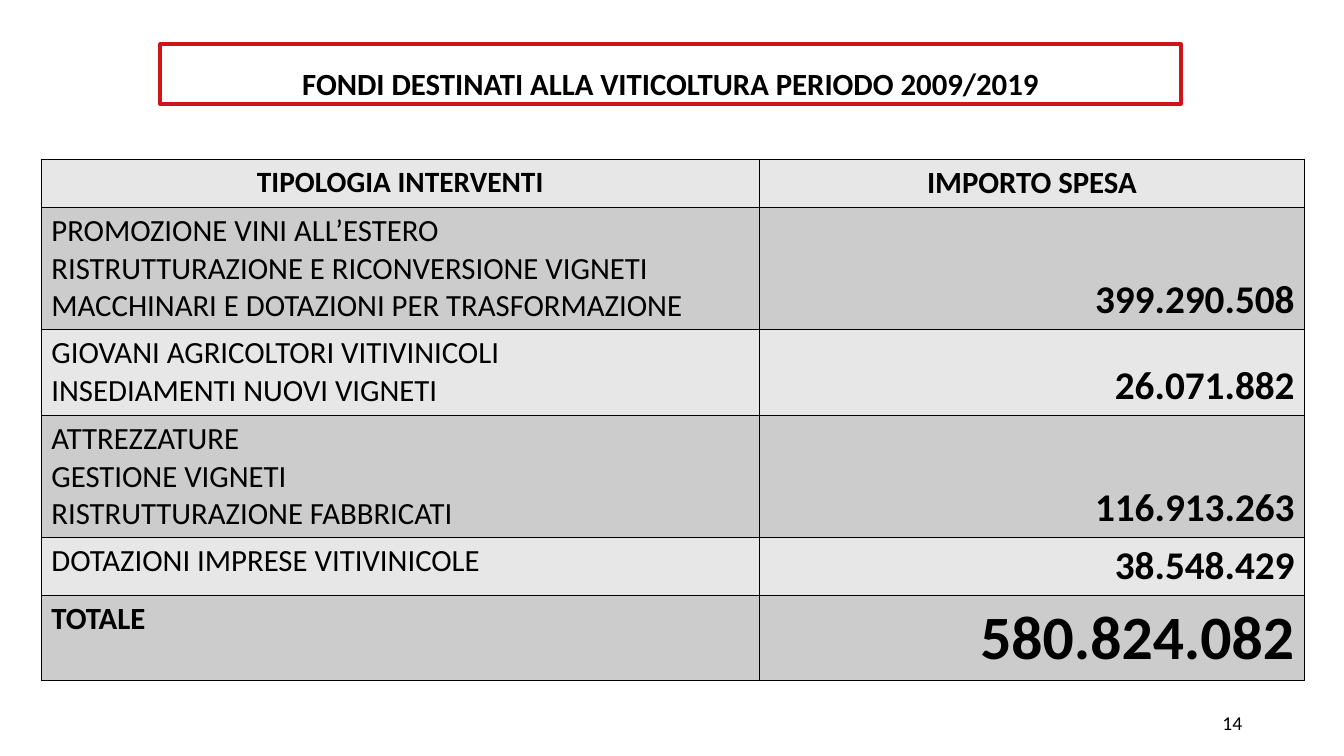
from lxml import etree
from pptx import Presentation
from pptx.dml.color import RGBColor
from pptx.enum.shapes import MSO_SHAPE
from pptx.enum.text import MSO_ANCHOR, PP_ALIGN
from pptx.oxml.ns import qn
from pptx.util import Inches, Pt

LEFT, CENTER, RIGHT = PP_ALIGN.LEFT, PP_ALIGN.CENTER, PP_ALIGN.RIGHT
TOP, MIDDLE, BOTTOM = MSO_ANCHOR.TOP, MSO_ANCHOR.MIDDLE, MSO_ANCHOR.BOTTOM
RECT = MSO_SHAPE.RECTANGLE

COLORS = {"text": "000000", "frame": "CE1517", "light": "E7E7E7", "dark": "CCCCCC"}
WIDTH, HEIGHT = 13.33, 7.5

# Row height, label lines, label bold, amount, amount size, amount anchor
FUNDS = [
    (1.21, ["PROMOZIONE VINI ALL’ESTERO", "RISTRUTTURAZIONE E RICONVERSIONE VIGNETI",
            "MACCHINARI E DOTAZIONI PER TRASFORMAZIONE"], False, "399.290.508", 28, BOTTOM),
    (0.85, ["GIOVANI AGRICOLTORI VITIVINICOLI", "INSEDIAMENTI NUOVI VIGNETI"],
     False, "26.071.882", 28, BOTTOM),
    (1.21, ["ATTREZZATURE", "GESTIONE VIGNETI", "RISTRUTTURAZIONE FABBRICATI"],
     False, "116.913.263", 28, BOTTOM),
    (0.58, ["DOTAZIONI IMPRESE VITIVINICOLE"], False, "38.548.429", 28, TOP),
    (0.84, ["TOTALE"], True, "580.824.082", 44, TOP),
]


def rgb(name):
    return RGBColor.from_string(COLORS[name])


class SlideBuilder:
    def __init__(self, prs, font="Calibri"):
        self.prs = prs
        self.font = font
        self.slide = prs.slides.add_slide(prs.slide_layouts[6])

    def box(self, x, y, w, h):
        """Turn shares of the slide's size into lengths."""
        sw, sh = self.prs.slide_width, self.prs.slide_height
        return int(x * sw), int(y * sh), int(w * sw), int(h * sh)

    def set_text(self, tf, lines, size, bold=False, align=LEFT, spacing=None):
        for i, line in enumerate(lines):
            p = tf.add_paragraph() if i else tf.paragraphs[0]
            p.text = line
            p.alignment = align
            p.line_spacing = spacing
            p.font.name, p.font.size, p.font.bold = self.font, Pt(size), bold
            p.font.color.rgb = rgb("text")

    def framed_title(self, text, area):
        sp = self.slide.shapes.add_shape(RECT, *self.box(*area))
        sp.shadow.inherit = False
        sp.fill.background()
        sp.line.color.rgb = rgb("frame")
        sp.line.width = Pt(3)
        sp.text_frame.vertical_anchor = MIDDLE
        self.set_text(sp.text_frame, [text], 22, True, CENTER, 1.5)

    def page_number(self, text, area):
        tf = self.slide.shapes.add_textbox(*self.box(*area)).text_frame
        tf.word_wrap = True
        tf.vertical_anchor = MIDDLE
        self.set_text(tf, [text], 14, align=RIGHT)

    def table(self, area, columns, heights):
        frame = self.slide.shapes.add_table(len(heights), len(columns), *self.box(*area))
        table = frame.table
        for column, width in zip(table.columns, columns):
            column.width = Inches(width)
        for row, height in zip(table.rows, heights):
            row.height = Inches(height)
        return table

    def cell(self, cell, fill, lines, size, bold, align, anchor=TOP):
        self.set_text(cell.text_frame, lines, size, bold, align)
        cell.vertical_anchor = anchor
        tc_pr = cell._tc.get_or_add_tcPr()
        for side in ("a:lnL", "a:lnR", "a:lnT", "a:lnB"):
            ln = etree.SubElement(tc_pr, qn(side), w=str(Pt(1)))
            solid = etree.SubElement(ln, qn("a:solidFill"))
            etree.SubElement(solid, qn("a:srgbClr"), val=COLORS["text"])
        cell.fill.solid()
        cell.fill.fore_color.rgb = rgb(fill)


def main():
    prs = Presentation()
    prs.slide_width, prs.slide_height = Inches(WIDTH), Inches(HEIGHT)
    s = SlideBuilder(prs)

    s.framed_title("FONDI DESTINATI ALLA VITICOLTURA PERIODO 2009/2019",
                   (1.59 / WIDTH, 0.44 / HEIGHT, 10.12 / WIDTH, 0.59 / HEIGHT))
    s.page_number("14", (9.42 / WIDTH, 6.97 / HEIGHT, 3 / WIDTH, 0.4 / HEIGHT))

    heights = [0.48] + [fund[0] for fund in FUNDS]
    table = s.table((0.41 / WIDTH, 1.58 / HEIGHT, 12.53 / WIDTH, sum(heights) / HEIGHT),
                    (7.12, 5.41), heights)
    s.cell(table.cell(0, 0), "light", ["TIPOLOGIA INTERVENTI"], 21, True, CENTER)
    s.cell(table.cell(0, 1), "light", ["IMPORTO SPESA"], 22, True, CENTER)
    for i, (_, labels, bold, amount, size, anchor) in enumerate(FUNDS, 1):
        fill = "dark" if i % 2 else "light"
        s.cell(table.cell(i, 0), fill, labels, 22, bold, LEFT)
        s.cell(table.cell(i, 1), fill, [amount], size, True, RIGHT, anchor)

    prs.save("out.pptx")


if __name__ == "__main__":
    main()
